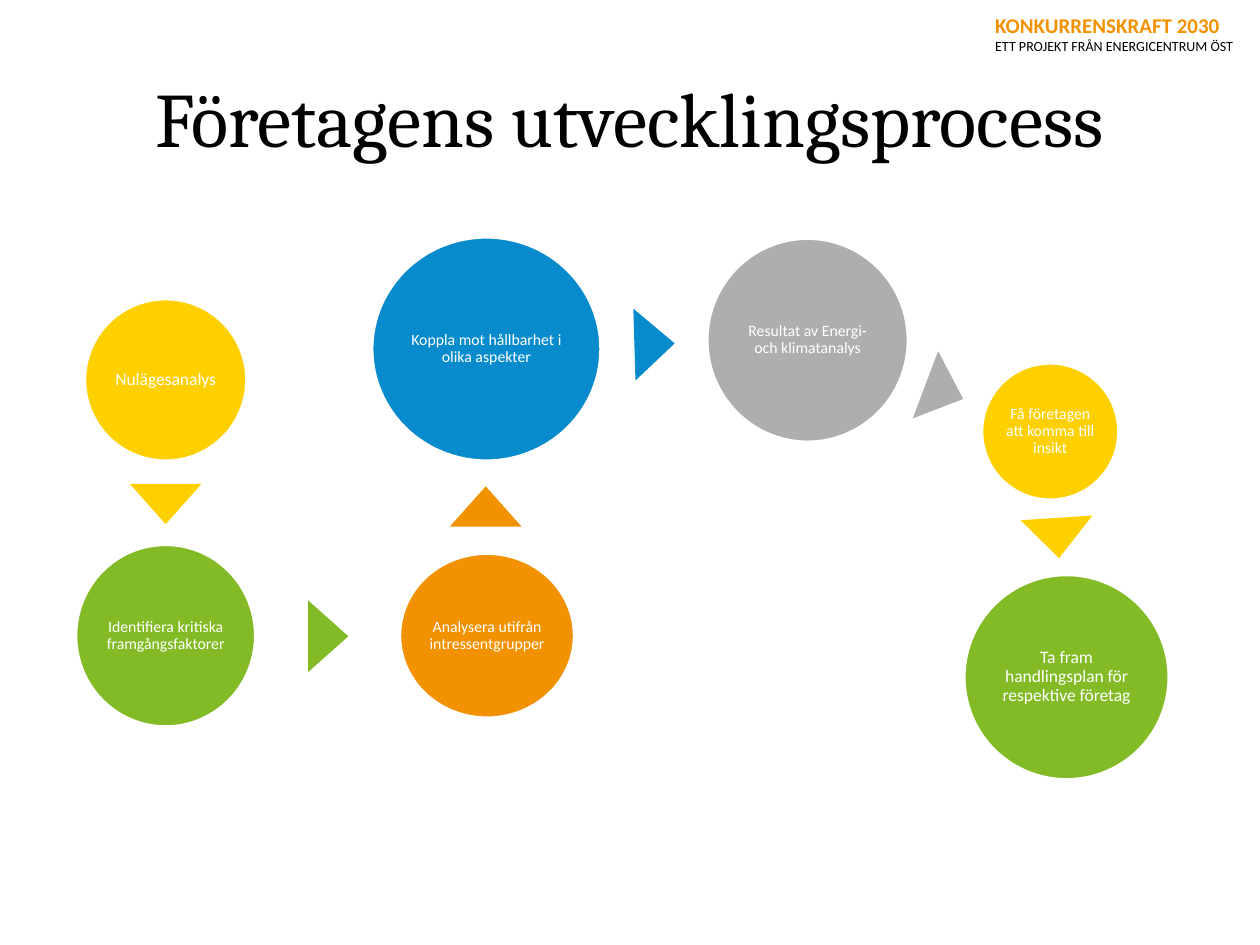
from pptx import Presentation
from pptx.dml.color import RGBColor
from pptx.enum.shapes import MSO_SHAPE
from pptx.enum.text import MSO_ANCHOR, PP_ALIGN
from pptx.util import Inches, Pt

YELLOW = RGBColor(0xFF, 0xD0, 0x00)
GREEN = RGBColor(0x83, 0xBB, 0x26)
ORANGE = RGBColor(0xF3, 0x92, 0x00)
BLUE = RGBColor(0x08, 0x8B, 0xCC)
GREY = RGBColor(0xAE, 0xAE, 0xAE)
WHITE = RGBColor(0xFF, 0xFF, 0xFF)
BLACK = RGBColor(0x00, 0x00, 0x00)

# Steps: text, size, colour, left, top, width, height
STEPS = [
    ("Nulägesanalys", 10, YELLOW, 0.67, 2.37, 1.29, 1.29),
    ("Identifiera kritiska framgångsfaktorer", 9, GREEN, 0.6, 4.32, 1.43, 1.45),
    ("Analysera utifrån intressentgrupper", 9, ORANGE, 3.17, 4.39, 1.39, 1.31),
    ("Koppla mot hållbarhet i olika aspekter", 9, BLUE, 2.95, 1.88, 1.82, 1.78),
    ("Resultat av Energi- och klimatanalys", 9, GREY, 5.61, 1.89, 1.6, 1.62),
    ("Få företagen att komma till insikt", 9, YELLOW, 7.79, 2.88, 1.09, 1.09),
    ("Ta fram handlingsplan för respektive företag", 10, GREEN, 7.65, 4.56, 1.63, 1.63),
]

# Pointers between the steps: colour, left, top, rotation
POINTERS = [
    (YELLOW, 1.03, 3.84, 180),
    (GREEN, 2.32, 4.89, 90),
    (ORANGE, 3.57, 3.86, 0),
    (BLUE, 4.91, 2.57, 88.3),
    (GREY, 7.21, 2.95, 110.6),
    (YELLOW, 8.11, 4.11, 176.3),
]


def write(para, text, *, size, color, font="Calibri", bold=False,
          align=PP_ALIGN.LEFT, line_spacing=None):
    para.alignment = align
    para.line_spacing = line_spacing
    span = para.add_run()
    span.text = text
    span.font.name = font
    span.font.size = Pt(size)
    span.font.bold = bold
    span.font.color.rgb = color


class ProcessPage:
    """Holds the slide and the shared style of its elements."""

    pointer_width, pointer_height = 0.57, 0.32
    circle_margin = 0.01

    def __init__(self, page):
        self.shapes = page.shapes

    def text_box(self, left, top, width, height, anchor=MSO_ANCHOR.TOP):
        box = self.shapes.add_textbox(
            Inches(left), Inches(top), Inches(width), Inches(height))
        frame = box.text_frame
        frame.word_wrap = True
        frame.vertical_anchor = anchor
        return frame

    def filled_shape(self, kind, color, left, top, width, height):
        shape = self.shapes.add_shape(
            kind, Inches(left), Inches(top), Inches(width), Inches(height))
        shape.shadow.inherit = False
        shape.fill.solid()
        shape.fill.fore_color.rgb = color
        return shape

    def step(self, text, size, color, *place):
        circle = self.filled_shape(MSO_SHAPE.OVAL, color, *place)
        circle.line.color.rgb = WHITE
        circle.line.width = Pt(2)
        frame = circle.text_frame
        frame.word_wrap = True
        frame.vertical_anchor = MSO_ANCHOR.MIDDLE
        frame.margin_left = frame.margin_right = Inches(self.circle_margin)
        frame.margin_top = frame.margin_bottom = Inches(self.circle_margin)
        write(frame.paragraphs[0], text, size=size, color=WHITE,
              align=PP_ALIGN.CENTER, line_spacing=0.9)

    def pointer(self, color, left, top, rotation):
        triangle = self.filled_shape(
            MSO_SHAPE.ISOSCELES_TRIANGLE, color, left, top,
            self.pointer_width, self.pointer_height)
        triangle.line.fill.background()
        triangle.rotation = rotation


def main():
    deck = Presentation()
    deck.slide_width, deck.slide_height = Inches(10), Inches(7.5)
    page = ProcessPage(deck.slides.add_slide(deck.slide_layouts[6]))

    # Project label
    label = page.text_box(7.8, 0.05, 2.27, 0.44)
    write(label.paragraphs[0], "KONKURRENSKRAFT 2030",
          size=12, color=ORANGE, bold=True)
    write(label.add_paragraph(), "ETT PROJEKT FRÅN ENERGICENTRUM ÖST",
          size=8, color=BLACK)

    # Process
    for step in STEPS:
        page.step(*step)
    for pointer in POINTERS:
        page.pointer(*pointer)

    # Title
    title = page.text_box(0.5, 0.3, 9, 1.25, anchor=MSO_ANCHOR.MIDDLE)
    write(title.paragraphs[0], "Företagens utvecklingsprocess", size=44,
          color=BLACK, font="Cambria", align=PP_ALIGN.CENTER)

    deck.save("out.pptx")


if __name__ == "__main__":
    main()
